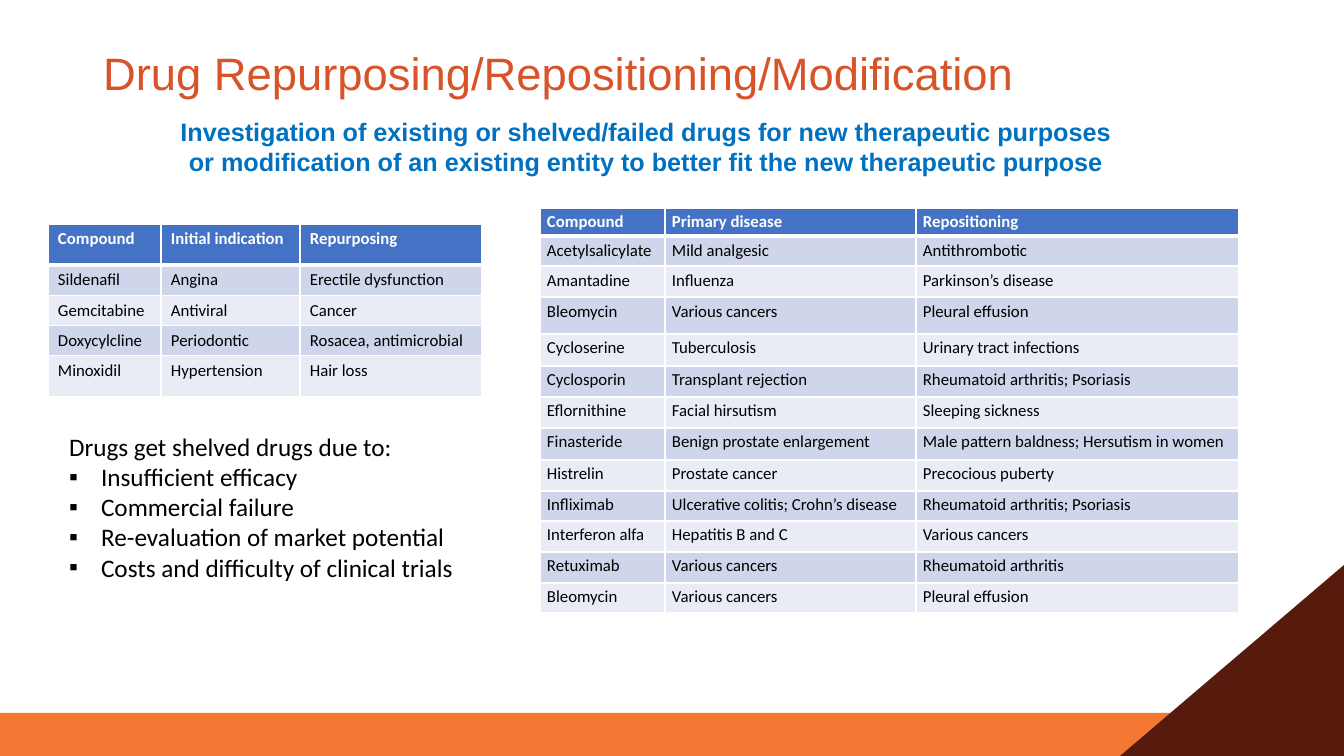
import dataclasses

import lxml.etree
import pptx
import pptx.dml.color
import pptx.enum.shapes
import pptx.enum.text
import pptx.oxml.ns
import pptx.util

SHAPE = pptx.enum.shapes.MSO_SHAPE
ALIGN = pptx.enum.text.PP_ALIGN
ANCHOR = pptx.enum.text.MSO_ANCHOR
NO_FIT = pptx.enum.text.MSO_AUTO_SIZE.NONE


@dataclasses.dataclass(frozen=True)
class Theme:
    title: str = "D85327"
    subtitle: str = "0070C0"
    text: str = "000000"
    white: str = "FFFFFF"
    header: str = "4472C4"
    bands: tuple = ("CFD5EA", "E9EBF5")
    footer: str = "F47734"
    corner: str = "561B0D"
    heading_font: str = "Arial"
    body_font: str = "Calibri"
    title_size: float = 32.4
    body_size: float = 18
    table_size: float = 12


THEME = Theme()

REASONS = ["Drugs get shelved drugs due to:", "Insufficient efficacy", "Commercial failure",
           "Re-evaluation of market potential", "Costs and difficulty of clinical trials"]

REPURPOSED = [
    ("Compound", "Initial indication", "Repurposing"),
    ("Sildenafil", "Angina", "Erectile dysfunction"),
    ("Gemcitabine", "Antiviral", "Cancer"),
    ("Doxycylcline", "Periodontic", "Rosacea, antimicrobial"),
    ("Minoxidil", "Hypertension", "Hair loss"),
]

REPOSITIONED = [
    ("Compound", "Primary disease", "Repositioning"),
    ("Acetylsalicylate", "Mild analgesic", "Antithrombotic"),
    ("Amantadine", "Influenza", "Parkinson’s disease"),
    ("Bleomycin", "Various cancers", "Pleural effusion"),
    ("Cycloserine", "Tuberculosis", "Urinary tract infections"),
    ("Cyclosporin", "Transplant rejection", "Rheumatoid arthritis; Psoriasis"),
    ("Eflornithine", "Facial hirsutism", "Sleeping sickness"),
    ("Finasteride", "Benign prostate enlargement", "Male pattern baldness; Hersutism in women"),
    ("Histrelin", "Prostate cancer", "Precocious puberty"),
    ("Infliximab", "Ulcerative colitis; Crohn’s disease", "Rheumatoid arthritis; Psoriasis"),
    ("Interferon alfa", "Hepatitis B and C", "Various cancers"),
    ("Retuximab", "Various cancers", "Rheumatoid arthritis"),
    ("Bleomycin", "Various cancers", "Pleural effusion"),
]


def px(n):
    return pptx.util.Emu(round(n * 914400 / 100.8))


def rgb(value):
    return pptx.dml.color.RGBColor.from_string(value)


def add_element(parent, tag, **attrs):
    return lxml.etree.SubElement(parent, pptx.oxml.ns.qn(tag), attrs)


def style(p, size, font, color, bold=False):
    for r in p.runs:
        r.font.size = pptx.util.Pt(size)
        r.font.name = font
        r.font.color.rgb = rgb(color)
        r.font.bold = bold


def place(sp, box):
    sp.left, sp.top, sp.width, sp.height = map(px, box)


def add_decoration(s, kind, box, color):
    sp = s.shapes.add_shape(kind, *map(px, box))
    sp.shadow.inherit = False
    sp.fill.solid()
    sp.fill.fore_color.rgb = rgb(color)
    sp.line.fill.background()
    return sp


def fill_title(s, box):
    sp = s.shapes.title
    place(sp, box)
    tf = sp.text_frame
    tf.text = "Drug Repurposing/Repositioning/Modification"
    tf.auto_size = NO_FIT
    tf.vertical_anchor = ANCHOR.MIDDLE
    p = tf.paragraphs[0]
    p.alignment = ALIGN.LEFT
    p.line_spacing = 0.9
    style(p, THEME.title_size, THEME.heading_font, THEME.title)


def add_subtitle(s, box):
    tf = s.shapes.add_textbox(*map(px, box)).text_frame
    tf.word_wrap = True
    tf.text = ("Investigation of existing or shelved/failed drugs for new therapeutic purposes "
               "or modification of an existing entity to better fit the new therapeutic purpose")
    p = tf.paragraphs[0]
    p.alignment = ALIGN.CENTER
    style(p, THEME.body_size, THEME.heading_font, THEME.subtitle, bold=True)


def fill_reasons(s, box):
    """Fill the body placeholder with a lead line and its bulleted reasons."""
    sp = s.placeholders[1]
    place(sp, box)
    tf = sp.text_frame
    tf.text = "\n".join(REASONS)
    tf.auto_size = NO_FIT
    for i, p in enumerate(tf.paragraphs):
        pPr = p._p.get_or_add_pPr()
        indent = px(32) if i else 0
        pPr.set("marL", str(indent))
        pPr.set("indent", str(-indent))
        if i:
            add_element(pPr, "a:buFont", typeface="Arial")
            add_element(pPr, "a:buChar", char="▪")
        else:
            add_element(pPr, "a:buNone")
        p.space_before = pptx.util.Pt(0)
        style(p, THEME.body_size, THEME.body_font, THEME.text)


def add_borders(cell, row):
    """Draw white rules, with a heavier one under the header row."""
    tcPr = cell._tc.get_or_add_tcPr()
    widths = {"L": 1, "R": 1, "T": 3 if row == 1 else 1, "B": 3 if row == 0 else 1}
    for side, width in widths.items():
        ln = add_element(tcPr, f"a:ln{side}", w=str(pptx.util.Pt(width)))
        add_element(add_element(ln, "a:solidFill"), "a:srgbClr", val=THEME.white)


def add_drug_table(s, left, top, data, widths, heights, margins=(10, 5)):
    box = (left, top, sum(widths), sum(heights))
    table = s.shapes.add_table(len(data), len(widths), *map(px, box)).table
    for column, width in zip(table.columns, widths):
        column.width = px(width)
    for i, (row, height) in enumerate(zip(table.rows, heights)):
        row.height = px(height)
        for cell, text in zip(row.cells, data[i]):
            cell.margin_left = cell.margin_right = px(margins[0])
            cell.margin_top = cell.margin_bottom = px(margins[1])
            add_borders(cell, i)
            cell.fill.solid()
            cell.fill.fore_color.rgb = rgb(THEME.bands[(i - 1) % 2] if i else THEME.header)
            cell.text = text
            style(cell.text_frame.paragraphs[0], THEME.table_size, THEME.body_font,
                  THEME.text if i else THEME.white, bold=i == 0)


def build_repurposing_slide(prs):
    s = prs.slides.add_slide(prs.slide_layouts[1])
    add_decoration(s, SHAPE.RECTANGLE, (0, 713, 1342, 43), THEME.footer)
    corner = add_decoration(s, SHAPE.ISOSCELES_TRIANGLE, (1120, 565, 224, 191), THEME.corner)
    corner.adjustments[0] = 1
    fill_title(s, (93, 40, 962, 72))
    add_subtitle(s, (165, 111, 962, 72))
    fill_reasons(s, (59, 426, 440, 163))
    add_drug_table(s, 48, 224, REPURPOSED, (113, 139, 182), (41, 30, 30, 30, 41))
    add_drug_table(s, 540, 208, REPOSITIONED, (125, 251, 323),
                   (28, 30, 31, 37, 32, 31, 31, 32, 31, 30, 31, 31, 30), margins=(7, 4))


def main():
    prs = pptx.Presentation()
    prs.slide_width, prs.slide_height = px(1344), px(756)
    build_repurposing_slide(prs)
    prs.save("out.pptx")


if __name__ == "__main__":
    main()
